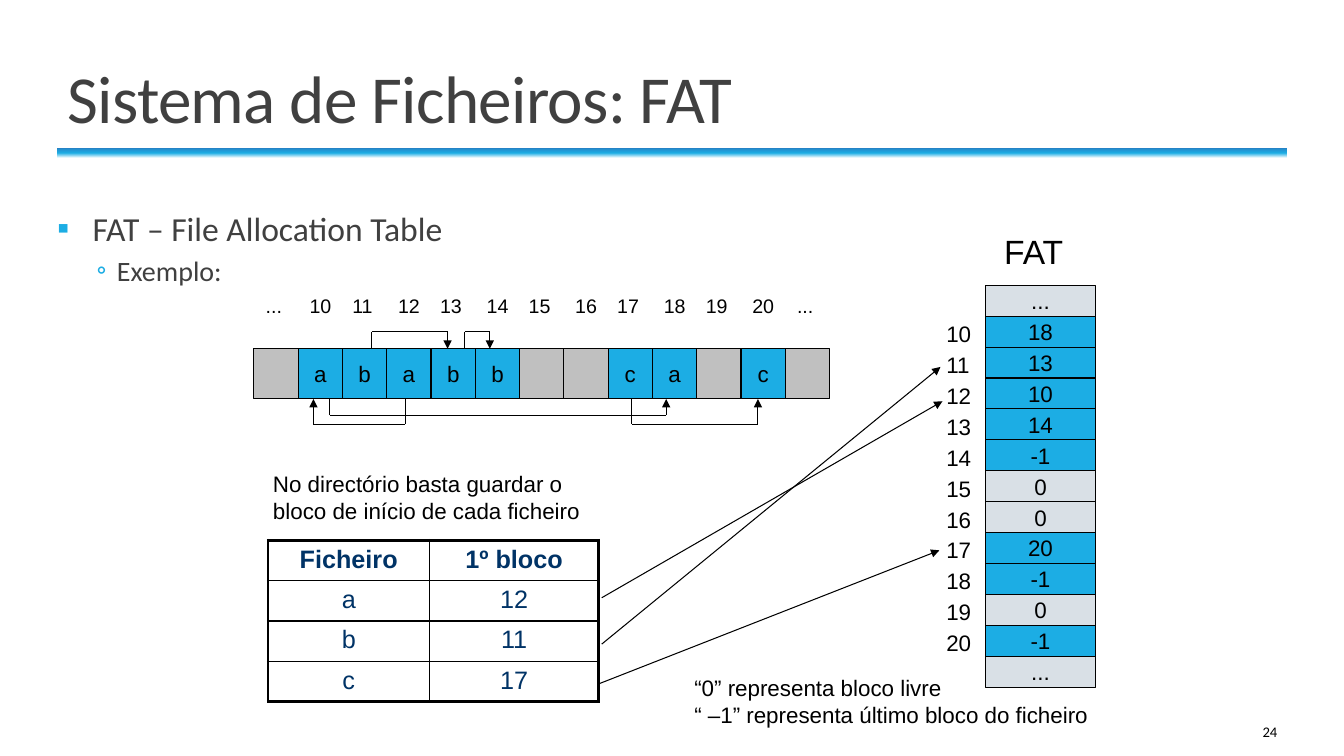
from collections import namedtuple

from pptx import Presentation
from pptx.dml.color import RGBColor
from pptx.enum import shapes, text
from pptx.oxml import parse_xml
from pptx.oxml.ns import nsdecls
from pptx.util import Pt

BLACK = RGBColor(0x00, 0x00, 0x00)
DARK_GREY = RGBColor(0x40, 0x40, 0x40)
MID_GREY = RGBColor(0xC0, 0xC0, 0xC0)
PALE_GREY = RGBColor(0xD9, 0xE0, 0xE6)
WHITE = RGBColor(0xFF, 0xFF, 0xFF)
BLUE = RGBColor(0x1C, 0xAD, 0xE4)
DEEP_BLUE = RGBColor(0x26, 0x83, 0xC6)
NAVY = RGBColor(0x00, 0x33, 0x66)

LEFT, CENTER, RIGHT = text.PP_ALIGN.LEFT, text.PP_ALIGN.CENTER, text.PP_ALIGN.RIGHT
TOP, MIDDLE, BOTTOM = text.MSO_ANCHOR.TOP, text.MSO_ANCHOR.MIDDLE, text.MSO_ANCHOR.BOTTOM

Box = namedtuple("Box", "left top width height")


def points(*lengths):
    return [Pt(length) for length in lengths]


def append_xml(parent, xml):
    """Append an element given as '<a:name .../>'."""
    tag_end = min(xml.index(mark) for mark in " />" if mark in xml)
    parent.append(parse_xml(f"{xml[:tag_end]} {nsdecls('a')}{xml[tag_end:]}"))


def add_run(paragraph, words, size, color=BLACK, font="Arial", bold=False):
    run = paragraph.add_run()
    run.text = words
    run.font.size, run.font.name, run.font.bold = Pt(size), font, bold
    run.font.color.rgb = color
    return run


def add_text(slide, box, lines, size, align=LEFT, anchor=TOP, font="Arial"):
    frame = slide.shapes.add_textbox(*points(*box)).text_frame
    frame.word_wrap, frame.vertical_anchor = True, anchor
    paragraph = frame.paragraphs[0]
    paragraph.alignment = align
    for number, line in enumerate(lines):
        if number:
            paragraph.add_line_break()
        add_run(paragraph, line, size, font=font)


def add_block(slide, box, words, fill):
    block = slide.shapes.add_shape(shapes.MSO_SHAPE.RECTANGLE, *points(*box))
    block.shadow.inherit = False
    block.fill.solid()
    block.fill.fore_color.rgb = fill
    block.line.color.rgb = BLACK
    block.line.width = Pt(0.75)
    if words:
        frame = block.text_frame
        frame.word_wrap, frame.vertical_anchor = False, MIDDLE
        frame.paragraphs[0].alignment = CENTER
        add_run(frame.paragraphs[0], words, 16)


def add_route(slide, stops):
    """Join the stops with straight lines, the last one with an arrowhead."""
    for start, end in zip(stops, stops[1:]):
        line = slide.shapes.add_connector(shapes.MSO_CONNECTOR.STRAIGHT, *points(*start, *end))
        line.line.color.rgb = BLACK
        line.line.width = Pt(0.75)
        append_xml(line._element.spPr, "<a:effectLst/>")
    append_xml(line.line._get_or_add_ln(), '<a:tailEnd type="triangle"/>')


def place(placeholder, box):
    placeholder.left, placeholder.top, placeholder.width, placeholder.height = points(*box)
    frame = placeholder.text_frame
    frame.word_wrap, frame.auto_size = True, text.MSO_AUTO_SIZE.NONE
    return frame


def build_title(slide, box):
    frame = place(slide.shapes.title, box)
    frame.vertical_anchor = BOTTOM
    paragraph = frame.paragraphs[0]
    paragraph.alignment, paragraph.line_spacing = LEFT, 0.85
    run = add_run(paragraph, "Sistema de Ficheiros: FAT", 48, DARK_GREY, "Calibri")
    run.font._element.set("spc", "-50")


def build_title_rule(slide, box):
    rule = slide.shapes.add_shape(shapes.MSO_SHAPE.RECTANGLE, *points(*box))
    rule.shadow.inherit = False
    rule.line.fill.background()
    rule.fill.gradient()
    rule.fill.gradient_angle = 90
    stops = rule._element.spPr.find(".//{*}gsLst")
    for stop in list(stops):
        stops.remove(stop)
    for position, color in ((0, WHITE), (50, BLUE), (100, DEEP_BLUE)):
        append_xml(stops, f'<a:gs pos="{position * 1000}"><a:srgbClr val="{color}"/></a:gs>')


def build_body(slide, box):
    frame = place(slide.placeholders[1], box)
    frame.vertical_anchor = TOP
    frame.margin_left = frame.margin_right = 0
    items = (("FAT – File Allocation Table", 24, "▪", 25.2, 25.2, 12, 2),
             ("Exemplo:", 20, "◦", 42.5, 14.4, 2, 4))
    for level, (words, size, bullet, margin, hanging, before, after) in enumerate(items):
        paragraph = frame.add_paragraph() if level else frame.paragraphs[0]
        paragraph.level, paragraph.alignment = level, LEFT
        paragraph.space_before, paragraph.space_after = Pt(before), Pt(after)
        properties = paragraph._p.get_or_add_pPr()
        properties.set("marL", str(Pt(margin)))
        properties.set("indent", str(-Pt(hanging)))
        append_xml(properties, f'<a:buClr><a:srgbClr val="{BLUE}"/></a:buClr>')
        append_xml(properties, '<a:buFont typeface="Calibri"/>')
        append_xml(properties, f'<a:buChar char="{bullet}"/>')
        add_run(paragraph, words, size, DARK_GREY, "Calibri")


def build_disk(slide, box):
    """Draw the row of disk blocks, their numbers and the chains between them."""
    owners = ["", *"ababb", "", "", *"ca", "", "c", ""]
    numbers = ["...", *map(str, range(10, 21)), "..."]
    pitch = box.width / len(owners)
    for index, (owner, number) in enumerate(zip(owners, numbers)):
        block = Box(box.left + index * pitch, box.top, pitch, box.height)
        add_block(slide, block, owner, BLUE if owner else MID_GREY)
        pair, second = divmod(index - 1, 2)
        label_left = box.left + 32.4 + 2 * pitch * pair + 30 * second
        add_text(slide, Box(label_left, box.top - 42.9, 30.2, 23.8), [number], 14, CENTER)

    bottom = box.height + 0.6
    chains = ((84.3, 138.3, 0, -12.2), (150.5, 168.5, 0, -12.2),
              (108, 42.5, bottom, 54), (54, 294.5, bottom, 47.5), (270, 360, bottom, 54))
    for start, end, edge, rail in chains:
        corners = ((start, edge), (start, rail), (end, rail), (end, edge))
        add_route(slide, [(box.left + x, box.top + y) for x, y in corners])


def build_fat(slide, box):
    """Draw the FAT column with its heading and block numbers."""
    add_text(slide, Box(box.left - 19.5, box.top - 42.5, 107.3, 36), ["FAT"], 24, CENTER)
    entries = ["...", "18", "13", "10", "14", "-1", "0", "0", "20", "-1", "0", "-1", "..."]
    pitch = box.height / len(entries)
    for index, entry in enumerate(entries):
        top = box.top + index * pitch
        fill = PALE_GREY if entry in ("0", "...") else BLUE
        add_block(slide, Box(box.left, top, box.width, pitch), entry, fill)
        if 0 < index < len(entries) - 1:
            add_text(slide, Box(box.left - 35.3, top - 0.7, 36, 26.6), [str(9 + index)], 16)


def build_directory(slide, box):
    rows = (("Ficheiro", "1º bloco"), ("a", "12"), ("b", "11"), ("c", "17"))
    table = slide.shapes.add_table(len(rows), 2, *points(*box)).table
    table.first_row = table.horz_banding = False
    table.columns[0].width, table.columns[1].width = points(115.2, box.width - 115.2)
    for row, values in enumerate(rows):
        for column, value in enumerate(values):
            cell = table.cell(row, column)
            outer = {"L": column == 0, "R": column == 1, "T": row == 0, "B": row == len(rows) - 1}
            for side, is_outer in outer.items():
                width = Pt(2.25 if is_outer else 1)
                append_xml(cell._tc.get_or_add_tcPr(),
                           f'<a:ln{side} w="{width}"><a:solidFill><a:srgbClr val="{BLACK}"/>'
                           f'</a:solidFill></a:ln{side}>')
            cell.fill.background()
            paragraph = cell.text_frame.paragraphs[0]
            paragraph.alignment = CENTER
            add_run(paragraph, value, 18, NAVY, bold=row == 0)


def build_slide(presentation):
    slide = presentation.slides.add_slide(presentation.slide_layouts[1])
    build_title_rule(slide, Box(41, 105.8, 878.4, 7.2))
    build_title(slide, Box(41, 20.9, 878.4, 80.6))
    build_body(slide, Box(41, 144.7, 878.4, 347))
    build_disk(slide, Box(181.4, 249.1, 411.2, 35.3))
    build_fat(slide, Box(704.2, 203.8, 78, 287))
    build_directory(slide, Box(191.5, 385.9, 236.2, 115.2))
    for start, end in (((429.8, 427), (673.2, 286.6)), ((429.8, 460.1), (671.8, 262.1)),
                       ((428.4, 488.2), (671, 393.1))):
        add_route(slide, [start, end])
    add_text(slide, Box(187.9, 332.6, 241.2, 46),
             ["No directório basta guardar o bloco de início de cada ficheiro"], 16)
    add_text(slide, Box(488.9, 478.1, 305.3, 46),
             ["“0” representa bloco livre", "“ –1” representa último bloco do ficheiro"], 16)
    add_text(slide, Box(779.8, 508.3, 139.7, 28.8), ["24"], 10.5, RIGHT, MIDDLE, "Calibri")


def main():
    presentation = Presentation()
    presentation.slide_width, presentation.slide_height = points(960, 540)
    build_slide(presentation)
    presentation.save("out.pptx")


if __name__ == "__main__":
    main()
